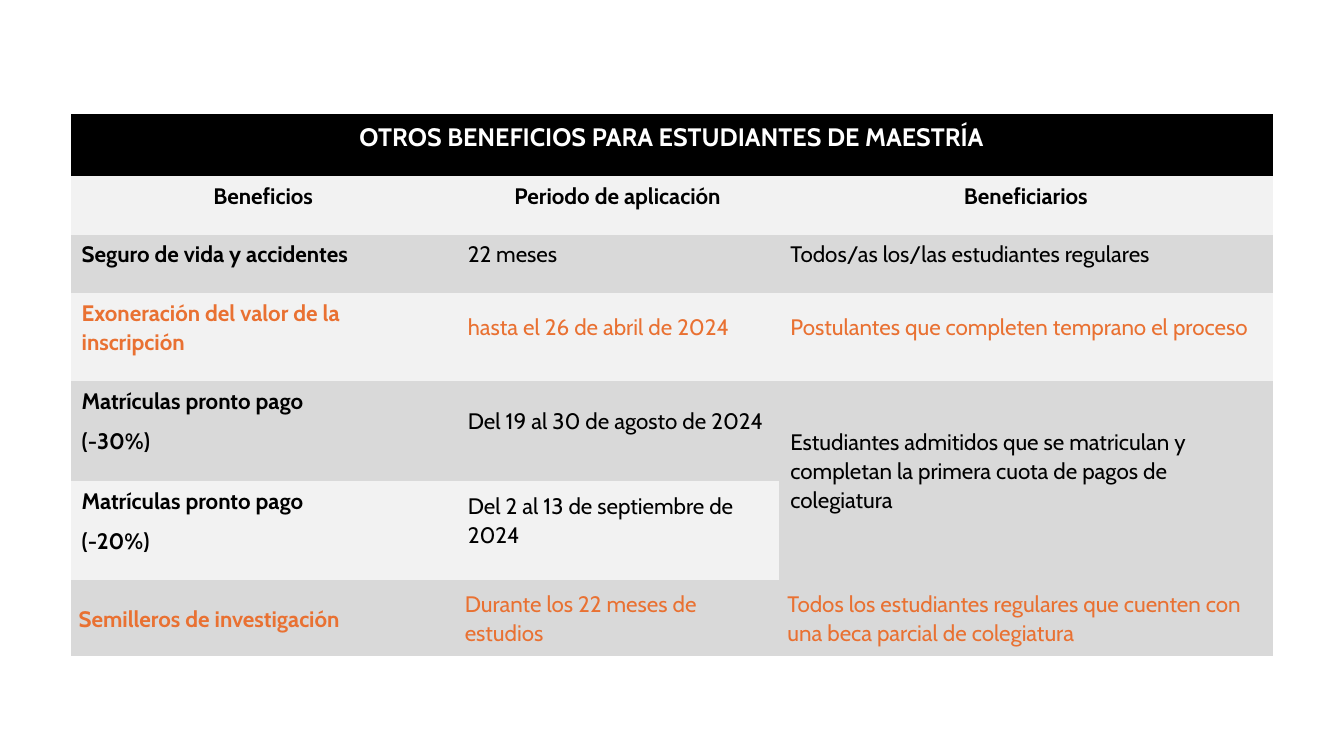
from pptx import Presentation
from pptx.dml.color import RGBColor
from pptx.enum.text import MSO_ANCHOR as Anchor, PP_ALIGN as Align
from pptx.oxml.ns import qn
from pptx.util import Inches, Pt

BLACK = RGBColor(0x00, 0x00, 0x00)
WHITE = RGBColor(0xFF, 0xFF, 0xFF)
ORANGE = RGBColor(0xE9, 0x71, 0x32)
LIGHT_GRAY = RGBColor(0xF2, 0xF2, 0xF2)
MID_GRAY = RGBColor(0xD9, 0xD9, 0xD9)

NO_STYLE_NO_GRID = "{2D5ABB26-0587-4C30-8999-92F81FD0307C}"
COLUMN_WIDTHS = [3.83, 3.2, 4.9]
ROW_HEIGHTS = [0.62, 0.58, 0.58, 0.87, 0.99, 0.99, 0.75]
ROW_FILLS = [BLACK, LIGHT_GRAY, MID_GRAY, LIGHT_GRAY, MID_GRAY, LIGHT_GRAY, MID_GRAY]
ROW_COLORS = [WHITE, BLACK, BLACK, ORANGE, BLACK, BLACK, ORANGE]
HEADER_ROWS = 2
LAST_ROW = len(ROW_HEIGHTS) - 1

BENEFITS = [
    ["OTROS BENEFICIOS PARA ESTUDIANTES DE MAESTRÍA", "", ""],
    ["Beneficios", "Periodo de aplicación", "Beneficiarios"],
    ["Seguro de vida y accidentes", "22 meses", "Todos/as los/las estudiantes regulares"],
    ["Exoneración del valor de la inscripción", "hasta el 26 de abril de 2024",
     "Postulantes que completen temprano el proceso"],
    ["Matrículas pronto pago\n(-30%)", "Del 19 al 30 de agosto de 2024",
     "Estudiantes admitidos que se matriculan y completan la primera cuota de pagos de colegiatura"],
    ["Matrículas pronto pago\n(-20%)", "Del 2 al 13 de septiembre de 2024", ""],
    ["Semilleros de investigación", "Durante los 22 meses de estudios",
     "Todos los estudiantes regulares que cuenten con una beca parcial de colegiatura"],
]

presentation = Presentation()
presentation.slide_width = Inches(13.33)
presentation.slide_height = Inches(7.5)
slide = presentation.slides.add_slide(presentation.slide_layouts[6])

frame = slide.shapes.add_table(
    len(ROW_HEIGHTS), len(COLUMN_WIDTHS), Inches(0.7), Inches(1.13),
    Inches(sum(COLUMN_WIDTHS)), Inches(sum(ROW_HEIGHTS)))
table = frame.table
table.horz_banding = False
next(frame.element.iter(qn("a:tableStyleId"))).text = NO_STYLE_NO_GRID

for column, width in zip(table.columns, COLUMN_WIDTHS):
    column.width = Inches(width)
for row, height in zip(table.rows, ROW_HEIGHTS):
    row.height = Inches(height)

table.cell(0, 0).merge(table.cell(0, 2))
table.cell(4, 2).merge(table.cell(5, 2))

for row_index, texts in enumerate(BENEFITS):
    is_header = row_index < HEADER_ROWS
    margins = (0.08, 0, 0.08, 0) if row_index == LAST_ROW else (0.11, 0.03, 0.12, 0.23)
    for column_index, text in enumerate(texts):
        cell = table.cell(row_index, column_index)
        cell.fill.solid()
        cell.fill.fore_color.rgb = ROW_FILLS[row_index]
        if cell.is_spanned:
            continue
        cell.vertical_anchor = Anchor.BOTTOM if row_index == 0 else Anchor.MIDDLE
        (cell.margin_left, cell.margin_top,
         cell.margin_right, cell.margin_bottom) = map(Inches, margins)
        cell.text_frame.text = text
        for paragraph in cell.text_frame.paragraphs:
            paragraph.alignment = Align.CENTER if is_header else Align.LEFT
            paragraph.line_spacing = 1.07
            paragraph.space_after = Pt(8)
            for run in paragraph.runs:
                run.font.name = "Cabin"
                run.font.size = Pt(18 if row_index == 0 else 16)
                run.font.bold = is_header or column_index == 0
                run.font.color.rgb = ROW_COLORS[row_index]

presentation.save("out.pptx")
